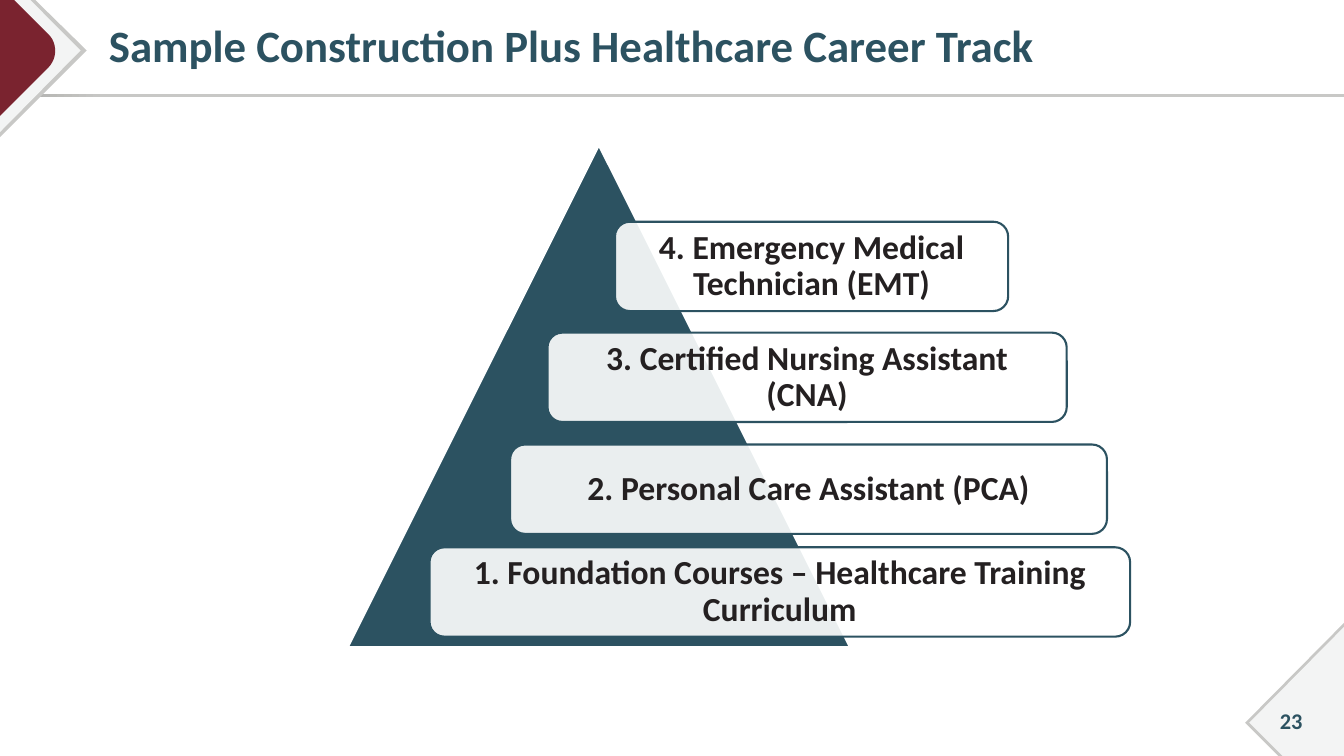
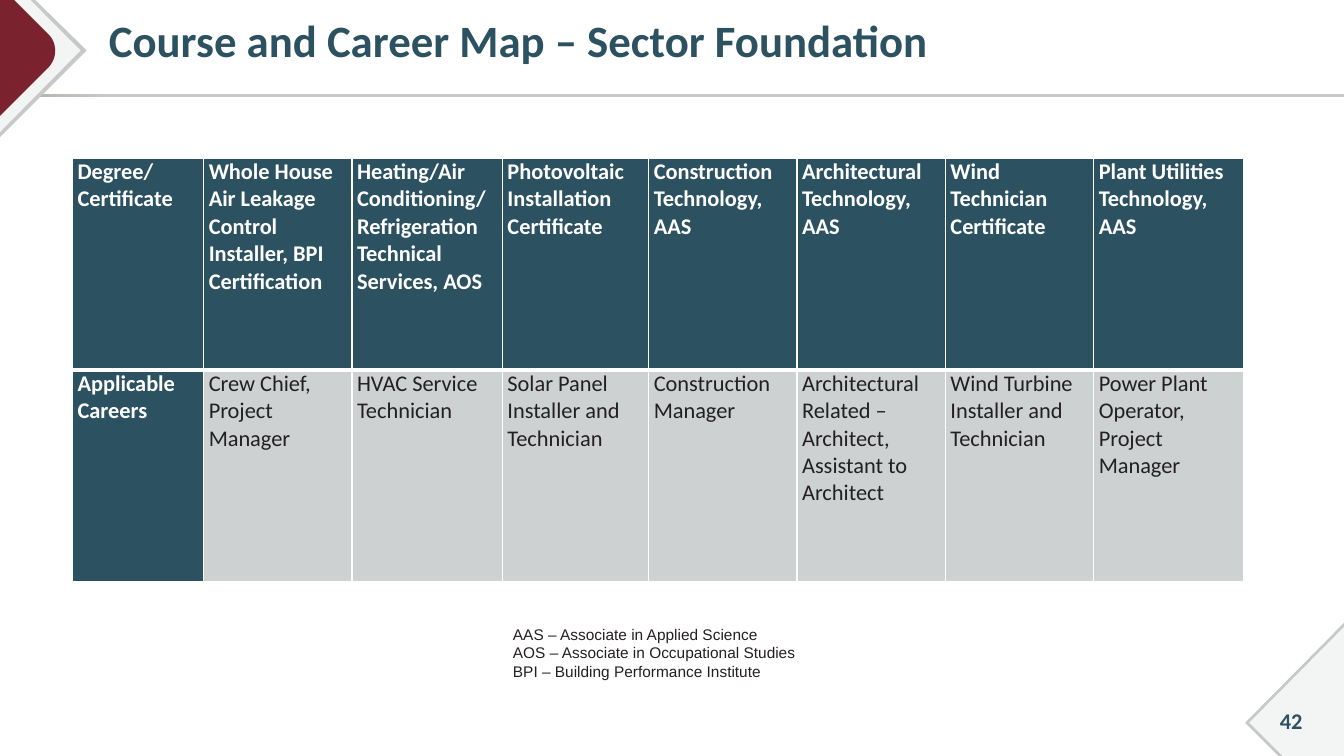
from dataclasses import dataclass

from lxml import etree
from pptx import Presentation
from pptx.dml.color import RGBColor
from pptx.enum.shapes import MSO_SHAPE
from pptx.enum.text import MSO_ANCHOR, MSO_AUTO_SIZE, PP_ALIGN
from pptx.oxml.ns import qn
from pptx.util import Inches, Pt

RECTANGLE = MSO_SHAPE.RECTANGLE
ROUNDED = MSO_SHAPE.ROUNDED_RECTANGLE
TRIANGLE = MSO_SHAPE.ISOSCELES_TRIANGLE
TOP, MIDDLE = MSO_ANCHOR.TOP, MSO_ANCHOR.MIDDLE
LEFT, CENTER = PP_ALIGN.LEFT, PP_ALIGN.CENTER
NO_AUTOFIT = MSO_AUTO_SIZE.NONE

TEAL, INK, WHITE = "2C5261", "242021", "FFFFFF"
SILVER, SHADE, PALE = "C8C8C6", "ABABA8", "F3F4F4"
MAROON, CELL_GREY = "7A232F", "CDD1D2"
HEADING_FONT, NOTE_FONT = "Calibri", "Arial"
TITLE_ONLY = 5

CORNER_UNITS = 1000
LEFT_CORNER = [
    (SILVER, [(0, 0), (257, 0), (632, 368), (0, 1000)]),
    (PALE, [(0, 0), (221, 0), (588, 368), (0, 963)]),
]
BADGE_START = [(0, 0), (103, 0)]
BADGE_CURVE = [(353, 250), (419, 316), (419, 426), (353, 493)]
BADGE_END = [(0, 846)]
RIGHT_CORNER = [
    (SILVER, [(1000, 0), (1000, 1000), (508, 1000), (258, 750)]),
    (PALE, [(1000, 30), (1000, 1000), (538, 1000), (288, 750)]),
]

CAREER_STEPS = [
    ("4. Emergency Medical Technician (EMT)", 34.15, 15.26, 50.26),
    ("3. Certified Nursing Assistant (CNA)", 25.52, 37.35, 66.37),
    ("2. Personal Care Assistant (PCA)", 20.75, 59.64, 76.29),
    ("1. Foundation Courses – Healthcare Training Curriculum", 10.44, 80.12, 89.56),
]
STEP_HEIGHT = 17.8
TRIANGLE_WIDTH = 64.18

COLUMN_WEIGHTS = [1.3, 1.47, 1.49, 1.45, 1.47, 1.47, 1.47, 1.48]
CAREER_MAP = [
    [
        "Degree/ Certificate",
        "Whole House Air Leakage Control Installer, BPI Certification",
        "Heating/Air Conditioning/ Refrigeration Technical Services, AOS",
        "Photovoltaic Installation Certificate",
        "Construction Technology, AAS",
        "Architectural Technology, AAS",
        "Wind Technician Certificate",
        "Plant Utilities Technology, AAS",
    ],
    [
        "Applicable Careers",
        "Crew Chief, Project Manager",
        "HVAC Service Technician",
        "Solar Panel Installer and Technician",
        "Construction Manager",
        "Architectural Related – Architect, Assistant to Architect",
        "Wind Turbine Installer and Technician",
        "Power Plant Operator, Project Manager",
    ],
]
ABBREVIATIONS = [
    "AAS – Associate in Applied Science",
    "AOS – Associate in Occupational Studies",
    "BPI – Building Performance Institute",
]


@dataclass
class Box:
    """A rectangle in EMU that can be divided by percentages."""

    left: int
    top: int
    width: int
    height: int

    def inner(self, left, top, width, height):
        """Return the inner box at the given percentages of this box."""
        return Box(
            int(self.left + self.width * left / 100),
            int(self.top + self.height * top / 100),
            int(self.width * width / 100),
            int(self.height * height / 100),
        )

    def bounds(self):
        """Return left, top, width and height for the add methods."""
        return self.left, self.top, self.width, self.height


PAGE = Box(0, 0, Inches(13.33), Inches(7.5))


def rgb(color):
    """Turn a hex string into a colour."""
    return RGBColor.from_string(color)


def paint(shape, fill, line=None):
    """Give a shape a flat fill and an optional outline."""
    shape.shadow.inherit = False
    shape.fill.solid()
    shape.fill.fore_color.rgb = rgb(fill)
    if line:
        shape.line.color.rgb = rgb(line)
        shape.line.width = Pt(1.5)
    else:
        shape.line.fill.background()


def write(frame, lines, size, color, bold=True, font=HEADING_FONT,
          align=LEFT, spacing=None):
    """Write one paragraph for each line of text."""
    for index, line in enumerate(lines):
        paragraph = frame.add_paragraph() if index else frame.paragraphs[0]
        paragraph.alignment = align
        if spacing:
            paragraph.line_spacing = spacing
        run = paragraph.add_run()
        run.text = line
        run.font.name, run.font.size = font, Pt(size)
        run.font.bold, run.font.color.rgb = bold, rgb(color)


def set_frame(frame, anchor, horizontal=0.1, vertical=0.05):
    """Set wrapping, anchor and insets of a text frame."""
    frame.word_wrap = True
    frame.auto_size = NO_AUTOFIT
    frame.vertical_anchor = anchor
    frame.margin_left = frame.margin_right = Inches(horizontal)
    frame.margin_top = frame.margin_bottom = Inches(vertical)


def curve_points(anchors, steps=12):
    """Sample a cubic curve from its four control points."""
    weights = (1, 3, 3, 1)
    points = []
    for step in range(steps + 1):
        t = step / steps
        blend = [w * (1 - t) ** (3 - i) * t ** i for i, w in enumerate(weights)]
        points.append(tuple(
            round(sum(b * anchor[axis] for b, anchor in zip(blend, anchors)))
            for axis in (0, 1)
        ))
    return points


def add_corner(slide, box, layers):
    """Stack polygons in a square corner box and return them."""
    polygons = []
    for color, points in layers:
        builder = slide.shapes.build_freeform(
            *points[0], scale=box.width / CORNER_UNITS)
        builder.add_line_segments(points[1:], close=True)
        polygon = builder.convert_to_shape(box.left, box.top)
        paint(polygon, color)
        polygons.append(polygon)
    return polygons


def decorate_layout(slide):
    """Draw the title rule and corners, then move them to the layout."""
    rule = slide.shapes.add_shape(RECTANGLE, *PAGE.inner(0, 12.4, 100, 0.4).bounds())
    paint(rule, SILVER)
    rule.fill.gradient()
    rule.fill.gradient_angle = 0
    for stop, (position, color) in zip(
            rule.fill.gradient_stops, [(0, SHADE), (0.08, SILVER)]):
        stop.position, stop.color.rgb = position, rgb(color)

    badge = BADGE_START + curve_points(BADGE_CURVE) + BADGE_END
    left_side, right_side = Inches(1.36), Inches(1.32)
    left_box = Box(0, 0, left_side, left_side)
    right_box = Box(PAGE.width - right_side, PAGE.height - right_side,
                    right_side, right_side)
    ornaments = [rule]
    ornaments += add_corner(slide, left_box, LEFT_CORNER + [(MAROON, badge)])
    ornaments += add_corner(slide, right_box, RIGHT_CORNER)
    for ornament in ornaments:
        slide.slide_layout.shapes.element.append(ornament.element)


def add_heading(slide, box, heading):
    """Place and format the title placeholder."""
    title = slide.shapes.title
    title.left, title.top, title.width, title.height = box.bounds()
    set_frame(title.text_frame, MIDDLE)
    title.text_frame.margin_left = Inches(0.2)
    write(title.text_frame, [heading], 32, TEAL, spacing=0.9)


def add_page_number(slide, box, number):
    """Place the page number in the lower right corner."""
    frame = slide.shapes.add_textbox(*box.bounds()).text_frame
    set_frame(frame, MIDDLE)
    write(frame, [number], 16, TEAL, align=CENTER)


def add_pyramid(slide, box):
    """Draw the triangle with the career steps over its right side."""
    triangle = slide.shapes.add_shape(
        TRIANGLE, *box.inner(0, 0, TRIANGLE_WIDTH, 100).bounds())
    paint(triangle, TEAL, WHITE)
    for label, left, top, width in CAREER_STEPS:
        step = slide.shapes.add_shape(
            ROUNDED, *box.inner(left, top, width, STEP_HEIGHT).bounds())
        paint(step, WHITE, TEAL)
        fill_color = step.element.spPr.find(qn("a:solidFill"))[0]
        etree.SubElement(fill_color, qn("a:alpha"), val="90000")
        set_frame(step.text_frame, MIDDLE, 0.11, 0.1)
        write(step.text_frame, [label], 24, INK, align=CENTER, spacing=0.9)


def add_borders(cell, widths):
    """Give a cell white borders of the given widths in points."""
    properties = cell._tc.get_or_add_tcPr()
    for side, width in widths.items():
        border = etree.SubElement(properties, qn(f"a:{side}"), w=str(Pt(width)))
        fill = etree.SubElement(border, qn("a:solidFill"))
        etree.SubElement(fill, qn("a:srgbClr"), val=WHITE)


def add_career_map(slide, box):
    """Build the table of certificates and careers."""
    table = slide.shapes.add_table(
        len(CAREER_MAP), len(COLUMN_WEIGHTS), *box.bounds()).table
    table.first_row = table.horz_banding = False
    for column, weight in zip(table.columns, COLUMN_WEIGHTS):
        column.width = int(box.width * weight / sum(COLUMN_WEIGHTS))
    for row, entries in enumerate(CAREER_MAP):
        for column, entry in enumerate(entries):
            cell = table.cell(row, column)
            is_header = row == 0 or column == 0
            add_borders(cell, {"lnL": 1, "lnR": 1,
                               "lnT": 3 if row else 1, "lnB": 1 if row else 3})
            cell.fill.solid()
            cell.fill.fore_color.rgb = rgb(TEAL if is_header else CELL_GREY)
            cell.margin_left = cell.margin_right = Inches(0.05)
            cell.margin_top = cell.margin_bottom = 0
            cell.vertical_anchor = TOP
            write(cell.text_frame, [entry], 16,
                  WHITE if is_header else INK, bold=is_header)


def add_abbreviations(slide, box):
    """Explain the abbreviations below the table."""
    frame = slide.shapes.add_textbox(*box.bounds()).text_frame
    set_frame(frame, TOP)
    write(frame, ABBREVIATIONS, 11, INK, bold=False, font=NOTE_FONT)


def add_slide(deck, heading, heading_top, number):
    """Add a titled slide with its page number."""
    slide = deck.slides.add_slide(deck.slide_layouts[TITLE_ONLY])
    add_heading(slide, PAGE.inner(6.6, heading_top, 90.92, 11.47), heading)
    add_page_number(slide, PAGE.inner(93.4, 92.67, 5.33, 5.33), number)
    return slide


def main():
    """Build and save the presentation."""
    deck = Presentation()
    deck.slide_width, deck.slide_height = PAGE.width, PAGE.height

    track = add_slide(deck, "Sample Construction Plus Healthcare Career Track", 0.67, "23")
    decorate_layout(track)
    add_pyramid(track, PAGE.inner(25.88, 19.2, 58.21, 66.4))

    foundation = add_slide(deck, "Course and Career Map – Sector Foundation", 0, "42")
    add_career_map(foundation, PAGE.inner(5.4, 20.93, 87.1, 56))
    add_abbreviations(foundation, PAGE.inner(37.43, 82, 22.96, 8.8))

    deck.save("out.pptx")


if __name__ == "__main__":
    main()
